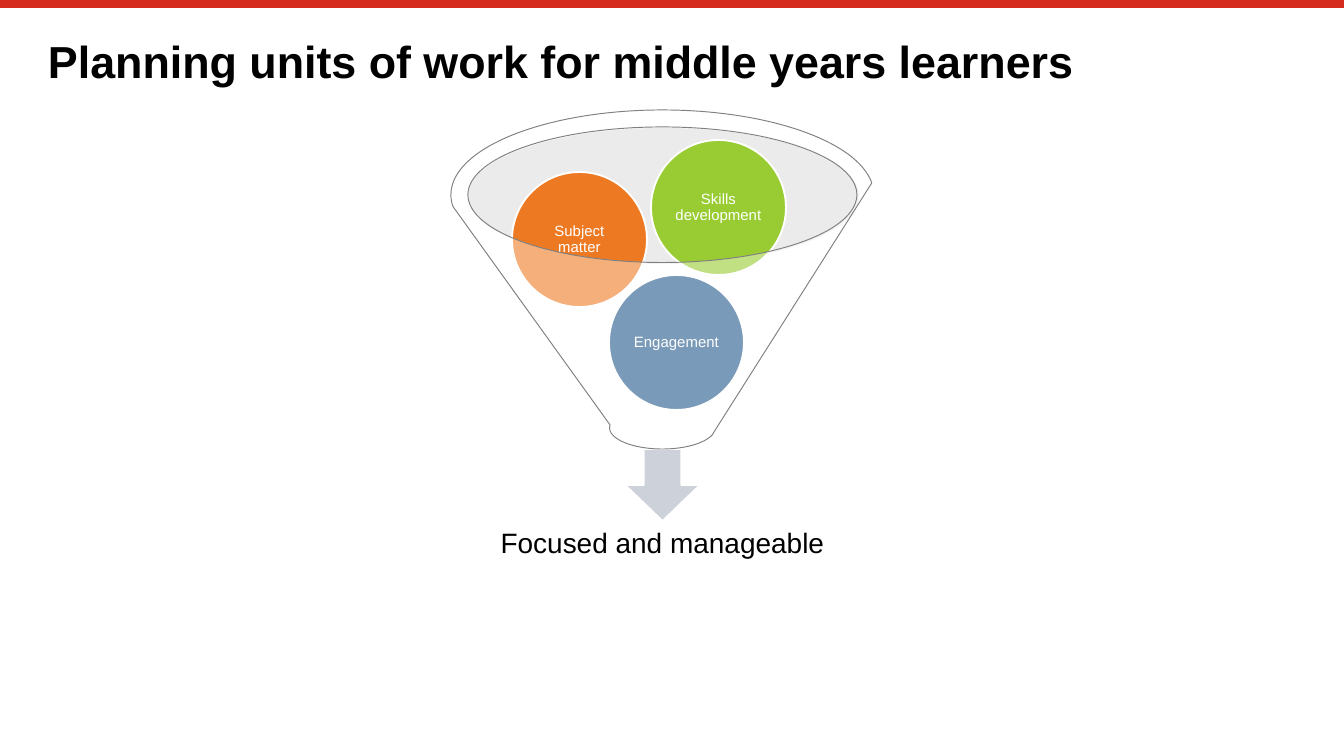
from dataclasses import dataclass
from typing import Optional

from lxml.etree import SubElement
from pptx import Presentation
from pptx.dml.color import RGBColor
from pptx.enum.shapes import MSO_CONNECTOR as Connector, MSO_SHAPE as Preset
from pptx.enum.text import MSO_ANCHOR as Anchor, MSO_AUTO_SIZE as AutoSize, PP_ALIGN as Align
from pptx.oxml.ns import qn
from pptx.util import Emu, Pt

EMU_PER_PX = 914400 / 134.4
BALL_SIZE = 135


@dataclass(frozen=True)
class Figure:
    preset: Preset
    left: int
    top: int
    width: int
    height: int
    fill: str
    opacity: int = 100
    line: Optional[str] = None
    weight: float = 1


@dataclass(frozen=True)
class Ball:
    label: str
    left: int
    top: int
    fill: str


RIM = Figure(Preset.OVAL, 468, 128, 391, 136, "CDCDCD", opacity=40)
ARROW = Figure(Preset.DOWN_ARROW, 625, 449, 75, 72, "CDD1DA", line="FFFFFF")
FUNNEL = Figure(Preset.FUNNEL, 451, 110, 423, 339, "FFFFFF", 40, "808080", 0.5)
BALLS = [
    Ball("Engagement", 609, 275, "21578A"),
    Ball("Subject matter", 512, 172, "ED7A23"),
    Ball("Skills development", 651, 140, "99CC33"),
]


def px(length: int) -> Emu:
    return Emu(round(length * EMU_PER_PX))


def color(value: str) -> RGBColor:
    return RGBColor.from_string(value)


def apply(target, values: dict) -> None:
    for name, value in values.items():
        setattr(target, name, value)


def place(shape, left: int, top: int, width: int, height: int) -> None:
    apply(shape, dict(left=px(left), top=px(top), width=px(width), height=px(height)))


def write(shape, text: str, size: int, ink: str, inset: int = 0, bold: bool = False,
          align: Align = Align.CENTER, anchor: Anchor = Anchor.MIDDLE) -> None:
    frame = shape.text_frame
    apply(frame, dict(
        text=text, word_wrap=True, auto_size=AutoSize.NONE, vertical_anchor=anchor,
        margin_left=px(inset), margin_right=px(inset),
        margin_top=px(inset), margin_bottom=px(inset),
    ))
    para = frame.paragraphs[0]
    apply(para, dict(alignment=align, line_spacing=0.9))
    span = para.runs[0]
    apply(span.font, dict(name="Arial", size=Pt(size), bold=bold))
    span.font.color.rgb = color(ink)


def draw_figure(page, figure: Figure):
    shape = page.shapes.add_shape(
        figure.preset, px(figure.left), px(figure.top), px(figure.width), px(figure.height))
    shape.shadow.inherit = False
    shape.fill.solid()
    shape.fill.fore_color.rgb = color(figure.fill)
    if figure.opacity < 100:
        tint = shape.fill._xPr.find(qn("a:solidFill"))[0]
        SubElement(tint, qn("a:alpha")).set("val", str(figure.opacity * 1000))
    if figure.line:
        shape.line.color.rgb = color(figure.line)
        shape.line.width = Pt(figure.weight)
    else:
        shape.line.fill.background()
    return shape


def draw_ball(page, ball: Ball) -> None:
    shape = draw_figure(page, Figure(
        Preset.OVAL, ball.left, ball.top, BALL_SIZE, BALL_SIZE, ball.fill, line="FFFFFF"))
    write(shape, ball.label, 8, "FFFFFF", inset=1)


def draw_top_rule(page) -> None:
    rule = page.shapes.add_connector(Connector.STRAIGHT, px(0), px(4), px(1344), px(4))
    rule.line.color.rgb = color("D52B1E")
    rule.line.width = Pt(4.2)
    SubElement(rule._element.spPr, qn("a:effectLst"))


def main() -> None:
    deck = Presentation()
    apply(deck, dict(slide_width=px(1344), slide_height=px(756)))
    page = deck.slides.add_slide(deck.slide_layouts[5])

    draw_top_rule(page)
    title = page.shapes.title
    place(title, 48, 40, 1249, 52)
    write(title, "Planning units of work for middle years learners", 24, "000000",
          bold=True, align=Align.LEFT, anchor=Anchor.TOP)

    draw_figure(page, RIM)
    draw_figure(page, ARROW)
    outcome = page.shapes.add_textbox(px(481), px(499), px(363), px(91))
    write(outcome, "Focused and manageable", 15, "000000", inset=16)
    for ball in BALLS:
        draw_ball(page, ball)
    draw_figure(page, FUNNEL)

    deck.save("out.pptx")


if __name__ == "__main__":
    main()
